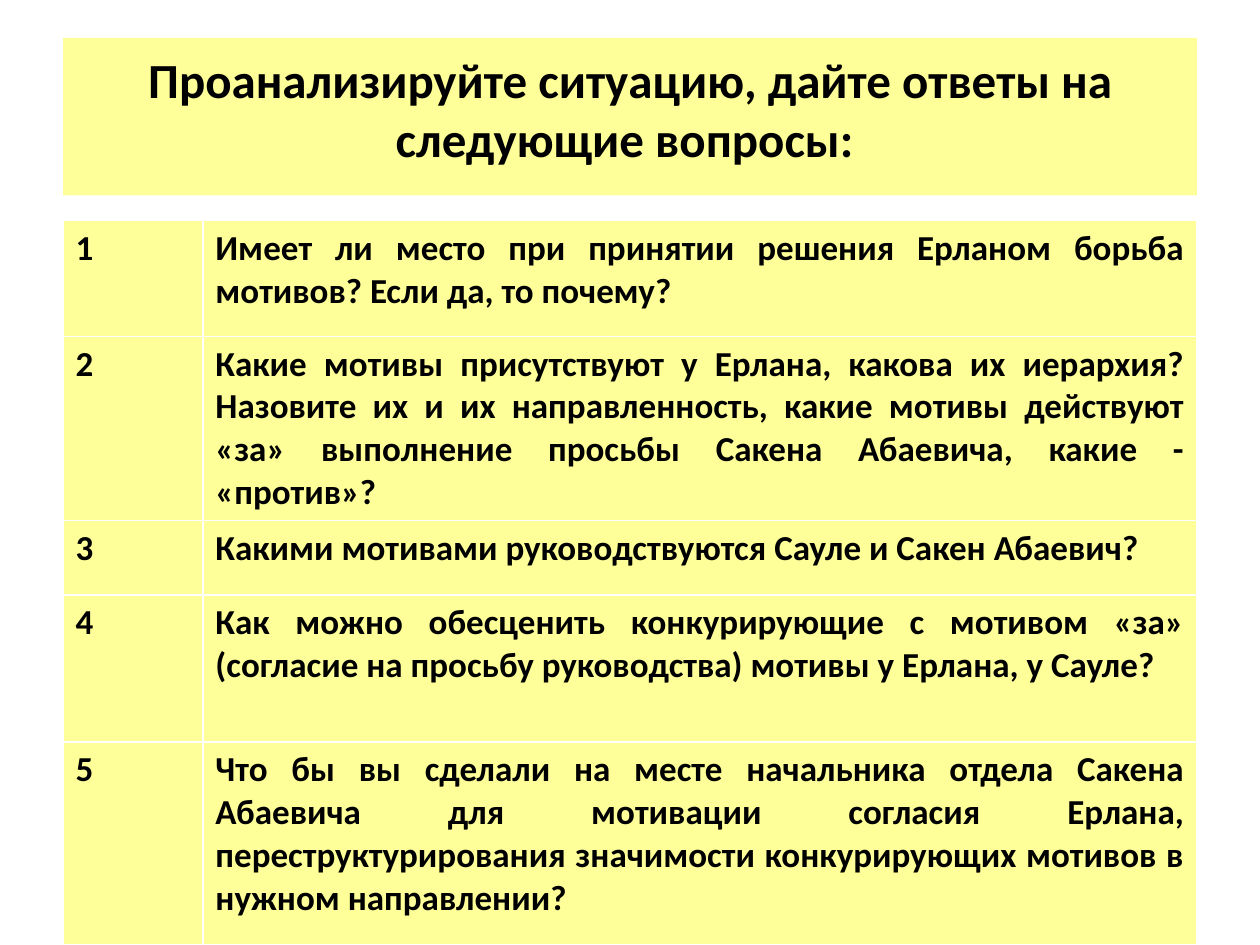
"""Build a slide with a title band and a numbered table of five questions."""
from pptx import Presentation, util as u
from pptx.dml.color import RGBColor
from pptx.enum import text

THEME = {
    "band": RGBColor.from_string("FFFF99"),
    "title": {"name": "Calibri", "size": u.Pt(28), "bold": True},
    "question": {"name": "Calibri", "size": u.Pt(20), "bold": True},
    "ink": RGBColor.from_string("000000"),
}
QUESTIONS = [
    (0.92, "Имеет ли место при принятии решения Ерланом борьба мотивов? Если да, то почему?"),
    (1.46, "Какие мотивы присутствуют у Ерлана, какова их иерархия? Назовите их и их "
           "направленность, какие мотивы действуют «за» выполнение просьбы Сакена Абаевича, "
           "какие - «против»?"),
    (0.59, "Какими мотивами руководствуются Сауле и Сакен Абаевич?"),
    (1.17, "Как можно обесценить конкурирующие с мотивом «за» (согласие на просьбу "
           "руководства) мотивы у Ерлана, у Сауле?"),
    (1.61, "Что бы вы сделали на месте начальника отдела Сакена Абаевича для мотивации "
           "согласия Ерлана, переструктурирования значимости конкурирующих мотивов в "
           "нужном направлении?"),
]


def write(frame, wording, style, align):
    frame.text = wording
    paragraph = frame.paragraphs[0]
    paragraph.alignment = align
    font = paragraph.runs[0].font
    for attribute, value in THEME[style].items():
        setattr(font, attribute, value)
    font.color.rgb = THEME["ink"]


def paint(part):
    part.fill.solid()
    part.fill.fore_color.rgb = THEME["band"]


deck = Presentation()
deck.slide_width, deck.slide_height = u.Inches(10), u.Inches(7.5)
slide = deck.slides.add_slide(deck.slide_layouts[5])
margin = int(deck.slide_width * 0.05)
content_width = deck.slide_width - 2 * margin

heading = slide.shapes.title
heading_format = {"left": margin, "top": int(deck.slide_height * 0.04),
                  "width": content_width, "height": int(deck.slide_height / 6)}
for attribute, value in heading_format.items():
    setattr(heading, attribute, value)
paint(heading)
write(heading.text_frame, "Проанализируйте ситуацию, дайте ответы на следующие вопросы: ",
      "title", text.PP_ALIGN.CENTER)
frame_format = {"auto_size": text.MSO_AUTO_SIZE.NONE, "word_wrap": True,
                "vertical_anchor": text.MSO_ANCHOR.MIDDLE, "margin_bottom": u.Inches(0.18)}
for attribute, value in frame_format.items():
    setattr(heading.text_frame, attribute, value)

table_height = u.Inches(sum(height for height, _ in QUESTIONS))
questions = slide.shapes.add_table(len(QUESTIONS), 2, margin, u.Inches(1.75),
                                   content_width, table_height).table
number_width = u.Inches(1.11)
questions.columns[0].width = number_width
questions.columns[1].width = content_width - number_width

for index, (height, question) in enumerate(QUESTIONS):
    questions.rows[index].height = u.Inches(height)
    for column, wording in enumerate((str(index + 1), question)):
        cell = questions.cell(index, column)
        paint(cell)
        write(cell.text_frame, wording, "question", text.PP_ALIGN.JUSTIFY)

deck.save("out.pptx")
